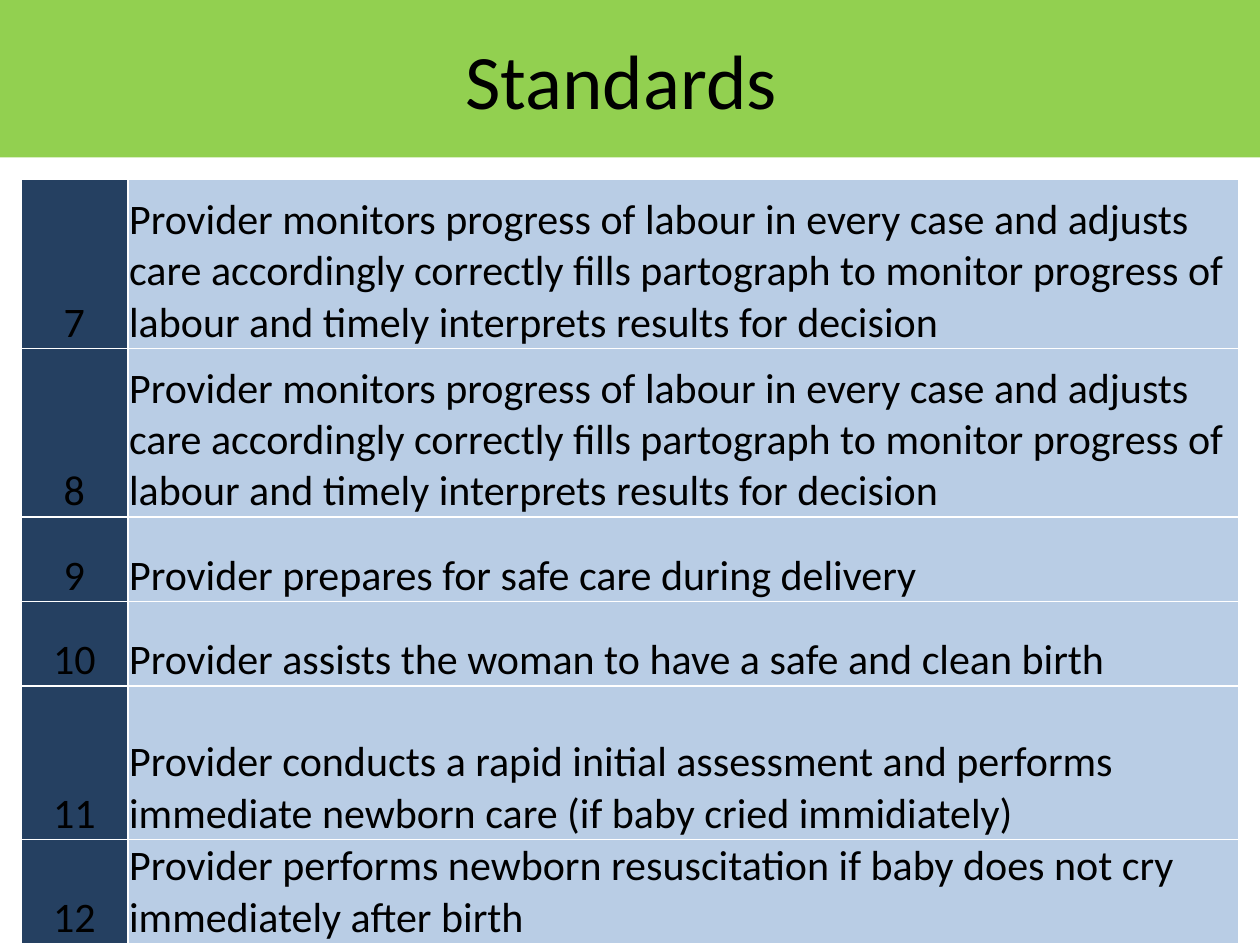
from lxml.etree import SubElement
from pptx import Presentation
from pptx.dml.color import RGBColor
from pptx.enum.shapes import MSO_SHAPE
from pptx.enum.text import MSO_ANCHOR, PP_ALIGN
from pptx.oxml.ns import qn
from pptx.util import Inches, Pt

COLORS = {
    "banner": "92D050",
    "number": "254061",
    "standard": "B9CDE5",
    "border": "FFFFFF",
    "text": "000000",
}
CELL_FORMAT = {
    "margin_left": Inches(0.01),
    "margin_top": Inches(0.01),
    "margin_right": Inches(0.01),
    "margin_bottom": 0,
    "vertical_anchor": MSO_ANCHOR.BOTTOM,
}
TABLE_FORMAT = {"first_row": False, "horz_banding": False}
MONITORING = (
    "Provider monitors progress of labour in every case and adjusts care "
    "accordingly correctly fills partograph to monitor progress of labour "
    "and timely interprets results for decision"
)
FIRST_NUMBER = 7
STANDARDS = [
    (MONITORING, 2),
    (MONITORING, 2),
    ("Provider prepares for safe care during delivery", 1),
    ("Provider assists the woman to have a safe and clean birth", 1),
    ("Provider conducts a rapid initial assessment and performs immediate "
     "newborn care (if baby cried immidiately)", 1.82),
    ("Provider performs newborn resuscitation if baby does not cry "
     "immediately after birth", 1),
]


def apply_format(target, values):
    for name, value in values.items():
        setattr(target, name, value)


class SlideBuilder:
    row_unit = Inches(0.67)
    column_widths = (Inches(0.85), Inches(8.82))
    font_name = "Calibri"

    def __init__(self, presentation):
        self.width = presentation.slide_width
        self.height = presentation.slide_height
        self.slide = presentation.slides.add_slide(presentation.slide_layouts[6])

    def fill(self, target, color):
        target.fill.solid()
        target.fill.fore_color.rgb = RGBColor.from_string(COLORS[color])

    def add_text(self, text_frame, text, size, alignment):
        paragraph = text_frame.paragraphs[0]
        paragraph.alignment = alignment
        run = paragraph.add_run()
        run.text = text
        apply_format(run.font, {"name": self.font_name, "size": Pt(size)})
        run.font.color.rgb = RGBColor.from_string(COLORS["text"])

    def banner(self, text, height_share):
        shape = self.slide.shapes.add_shape(
            MSO_SHAPE.RECTANGLE, 0, 0, self.width, int(self.height * height_share)
        )
        shape.shadow.inherit = False
        shape.line.fill.background()
        self.fill(shape, "banner")
        apply_format(shape.text_frame, {"word_wrap": True, "vertical_anchor": MSO_ANCHOR.MIDDLE})
        self.add_text(shape.text_frame, text, 44, PP_ALIGN.CENTER)

    def border(self, cell):
        properties = cell._tc.get_or_add_tcPr()
        for side in ("a:lnL", "a:lnR", "a:lnT", "a:lnB"):
            line = SubElement(properties, qn(side), w=str(Pt(1)))
            solid = SubElement(line, qn("a:solidFill"))
            SubElement(solid, qn("a:srgbClr"), val=COLORS["border"])

    def cell(self, cell, text, color, alignment):
        apply_format(cell, CELL_FORMAT)
        self.border(cell)
        self.fill(cell, color)
        self.add_text(cell.text_frame, text, 24, alignment)

    def standards_table(self, standards, first_number, top_share):
        table_width = sum(self.column_widths)
        table_height = int(sum(units for _, units in standards) * self.row_unit)
        table = self.slide.shapes.add_table(
            len(standards), len(self.column_widths),
            (self.width - table_width) // 2, int(self.height * top_share),
            table_width, table_height,
        ).table
        apply_format(table, TABLE_FORMAT)
        for column, width in zip(table.columns, self.column_widths):
            column.width = width
        for index, (text, units) in enumerate(standards):
            row = table.rows[index]
            row.height = int(units * self.row_unit)
            self.cell(row.cells[0], str(first_number + index), "number", PP_ALIGN.CENTER)
            self.cell(row.cells[1], text, "standard", PP_ALIGN.LEFT)


def main():
    presentation = Presentation()
    apply_format(presentation, {"slide_width": Inches(10), "slide_height": Inches(7.5)})
    builder = SlideBuilder(presentation)
    builder.standards_table(STANDARDS, FIRST_NUMBER, 0.19)
    builder.banner("Standards ", 1 / 6)
    presentation.save("out.pptx")


if __name__ == "__main__":
    main()
